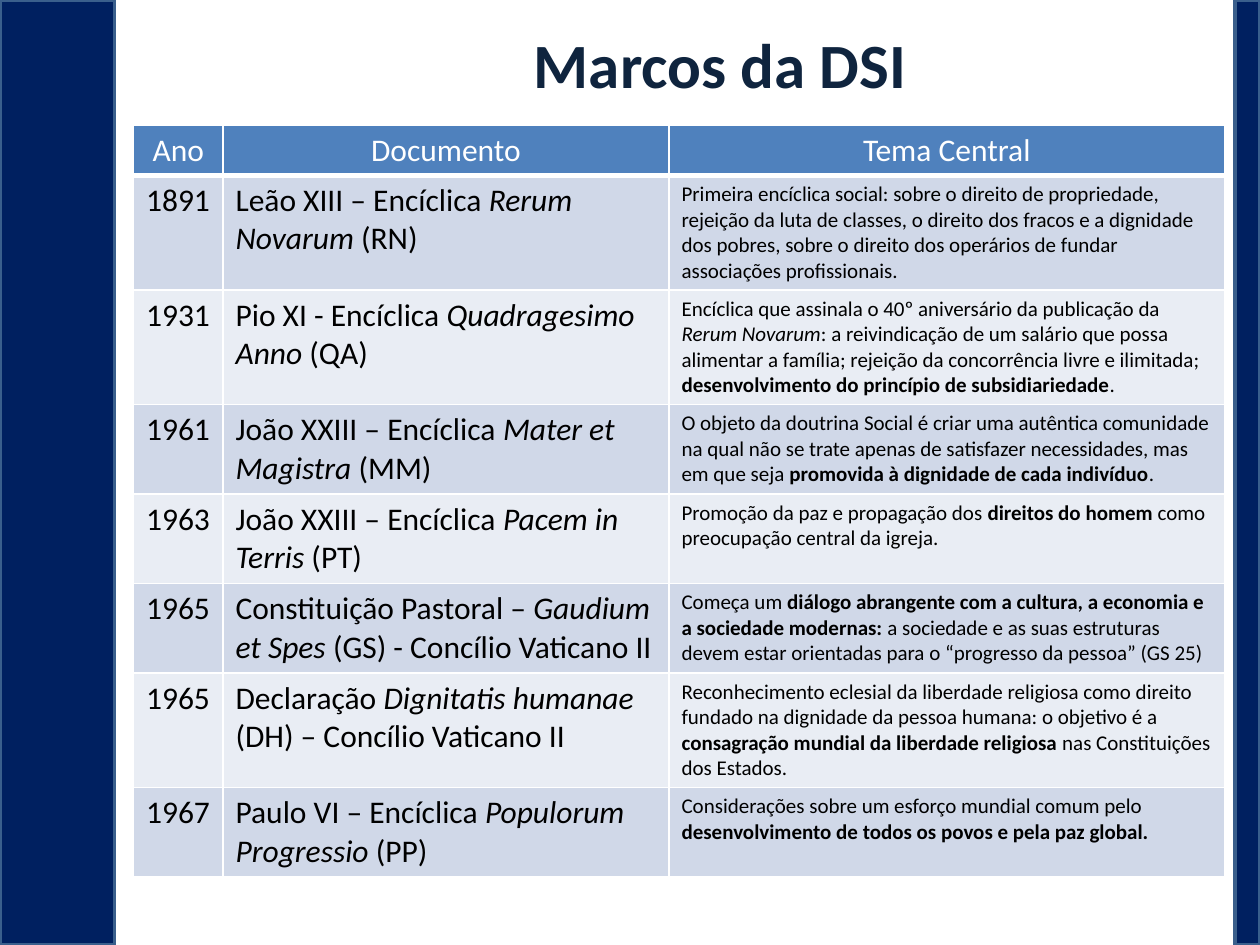
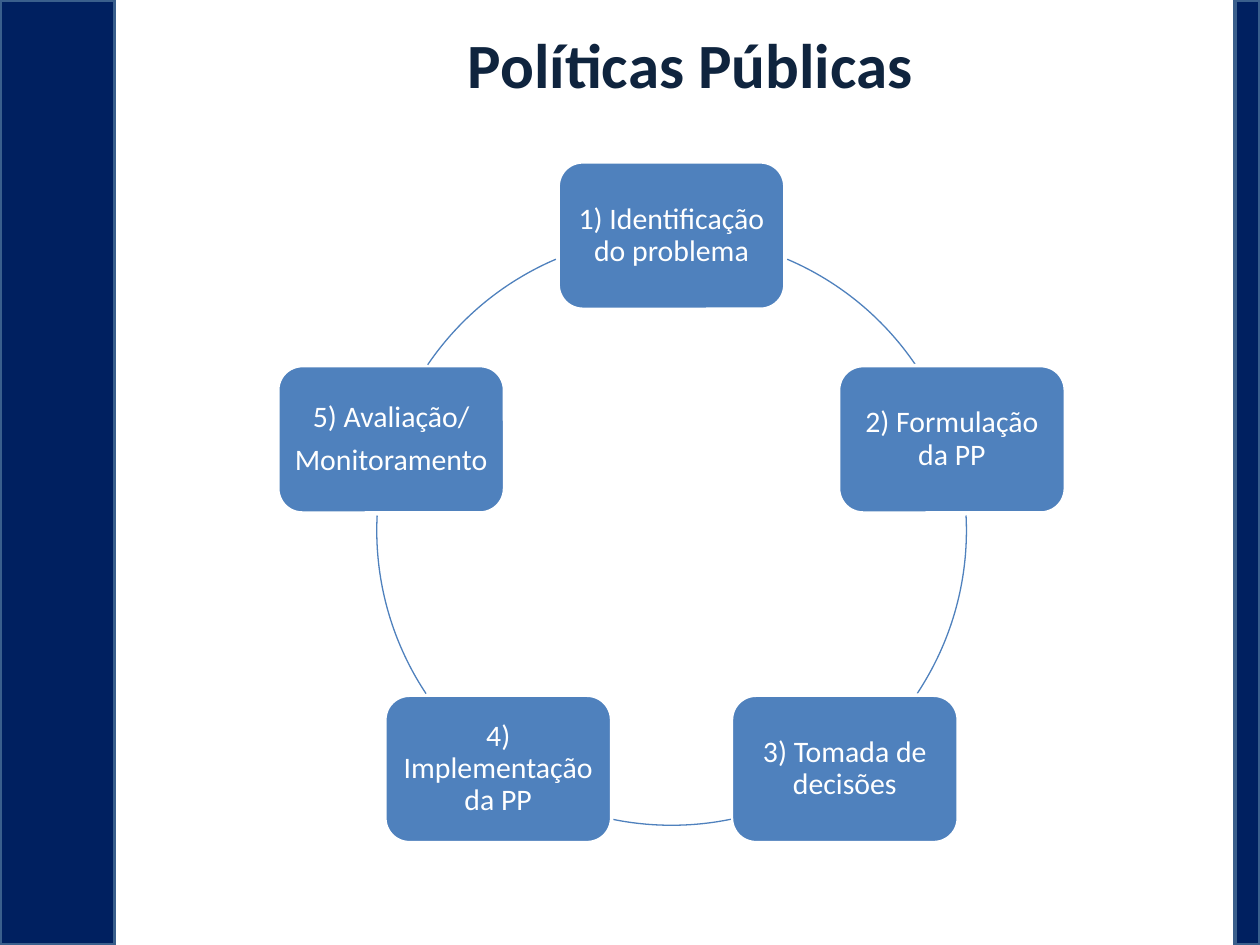
from math import cos, radians, sin

from lxml import etree
from pptx import Presentation
from pptx.dml.color import RGBColor
from pptx.enum.shapes import MSO_SHAPE
from pptx.enum.text import MSO_ANCHOR, PP_ALIGN
from pptx.oxml.ns import qn
from pptx.util import Inches, Pt

RECT, ROUND, ARC = MSO_SHAPE.RECTANGLE, MSO_SHAPE.ROUNDED_RECTANGLE, MSO_SHAPE.ARC
LEFT, CENTER = PP_ALIGN.LEFT, PP_ALIGN.CENTER
TOP, MIDDLE = MSO_ANCHOR.TOP, MSO_ANCHOR.MIDDLE

FONT = "Calibri"
COLORS = {
    "navy": "002060", "edge": "3A5F8C", "title": "0F243E", "blue": "4F81BD",
    "odd": "D0D8E8", "even": "E9EDF4", "white": "FFFFFF", "black": "000000",
}

# Table content: _italic_ and *bold* spans; the first item is the row height
HEADS = ("Ano", "Documento", "Tema Central")
WIDTHS = (0.71, 3.54, 4.41)
ROWS = [
    (0.91, "1891", "Leão XIII – Encíclica _Rerum Novarum_ (RN)",
     "Primeira encíclica social: sobre o direito de propriedade, rejeição da luta "
     "de classes, o direito dos fracos e a dignidade dos pobres, sobre o direito "
     "dos operários de fundar associações profissionais."),
    (0.91, "1931", "Pio XI - Encíclica _Quadragesimo Anno_ (QA)",
     "Encíclica que assinala o 40º aniversário da publicação da _Rerum Novarum_: "
     "a reivindicação de um salário que possa alimentar a família; rejeição da "
     "concorrência livre e ilimitada; "
     "*desenvolvimento do princípio de subsidiariedade*."),
    (0.71, "1961", "João XXIII – Encíclica _Mater et Magistra_ (MM)",
     "O objeto da doutrina Social é criar uma autêntica comunidade na qual não se "
     "trate apenas de satisfazer necessidades, mas em que seja "
     "*promovida à dignidade de cada indivíduo*."),
    (0.71, "1963", "João XXIII – Encíclica _Pacem in Terris_ (PT)",
     "Promoção da paz e propagação dos *direitos do homem* como preocupação "
     "central da igreja."),
    (0.71, "1965", "Constituição Pastoral – _Gaudium et Spes _(GS) - Concílio Vaticano II",
     "Começa um *diálogo abrangente com a cultura, a economia e a sociedade "
     "modernas:* a sociedade e as suas estruturas devem estar orientadas para o "
     "“progresso da pessoa” (GS 25)"),
    (0.91, "1965", "Declaração _Dignitatis humanae _(DH) – Concílio Vaticano II",
     "Reconhecimento eclesial da liberdade religiosa como direito fundado na "
     "dignidade da pessoa humana: o objetivo é a *consagração mundial da liberdade "
     "religiosa* nas Constituições dos Estados."),
    (0.71, "1967", "Paulo VI – Encíclica _Populorum Progressio_ (PP)",
     "Considerações sobre um esforço mundial comum pelo "
     "*desenvolvimento de todos os povos e pela paz global.*"),
]

# Cycle content: steps, and the arcs between them in degrees from the top
STEPS = ["1) Identificação do problema", "2) Formulação da PP",
         "3) Tomada de decisões", "4) Implementação da PP",
         "5) Avaliação/\nMonitoramento"]
ARCS = [(23.1, 55.8), (87.1, 123.6), (168.4, 191.6), (236.4, 272.9), (304.2, 336.9)]
MID_X, MID_Y, RADIUS = 5.33, 4.21, 2.34
BOX_W, BOX_H = 1.8, 1.17


def rgb(name):
    return RGBColor.from_string(COLORS[name])


def write(frame, text, size=18, color="black", bold=False, align=LEFT,
          anchor=TOP, inset=None, lines=None, after=0):
    """Fill a text frame, one paragraph a line, with _italic_ and *bold* spans."""
    frame.word_wrap = True
    frame.vertical_anchor = anchor
    if inset is not None:
        frame.margin_left = frame.margin_right = Inches(inset)
        frame.margin_top = frame.margin_bottom = Inches(inset)
    for num, line in enumerate(text.split("\n")):
        para = frame.add_paragraph() if num else frame.paragraphs[0]
        para.alignment = align
        para.space_after = Pt(after)
        if lines:
            para.line_spacing = lines
        for i, part in enumerate(line.split("*")):
            for j, bit in enumerate(part.split("_")):
                if not bit:
                    continue
                run = para.add_run()
                run.text = bit
                font = run.font
                font.name, font.size = FONT, Pt(size)
                font.bold = bold or i % 2 == 1
                font.italic = j % 2 == 1
                font.color.rgb = rgb(color)


def shape(slide, kind, box, fill, line, width):
    item = slide.shapes.add_shape(kind, *map(Inches, box))
    item.shadow.inherit = False
    if fill:
        item.fill.solid()
        item.fill.fore_color.rgb = rgb(fill)
    else:
        item.fill.background()
    item.line.color.rgb = rgb(line)
    item.line.width = Pt(width)
    return item


def page(deck, title, left):
    """Add a slide with the side bands and a title that ends at 9.66 inches."""
    slide = deck.slides.add_slide(deck.slide_layouts[6])
    for x, wide in ((0, 0.91), (9.8, 0.2)):
        shape(slide, RECT, (x, 0, wide, 7.5), "navy", "edge", 2)
    box = slide.shapes.add_textbox(
        Inches(left), Inches(0.13), Inches(9.66 - left), Inches(0.75))
    write(box.text_frame, title, size=36, color="title", bold=True,
          align=CENTER, anchor=MIDDLE)
    return slide


def border(cell, **widths):
    """Draw white cell edges; widths are points by side."""
    props = cell._tc.get_or_add_tcPr()
    for side in "LRTB":
        edge = etree.SubElement(props, qn("a:ln" + side), w=str(Pt(widths.get(side, 1))))
        fill = etree.SubElement(edge, qn("a:solidFill"))
        etree.SubElement(fill, qn("a:srgbClr"), val=COLORS["white"])


def paint(cell, fill, text, **style):
    cell.fill.solid()
    cell.fill.fore_color.rgb = rgb(fill)
    write(cell.text_frame, text, **style)


def grid(slide):
    tall = [0.4] + [row[0] for row in ROWS]
    table = slide.shapes.add_table(
        len(tall), len(HEADS), Inches(1.06), Inches(0.99),
        Inches(sum(WIDTHS)), Inches(sum(tall))).table
    for col, wide in zip(table.columns, WIDTHS):
        col.width = Inches(wide)
    for row, high in zip(table.rows, tall):
        row.height = Inches(high)
    # Header row
    for col, head in enumerate(HEADS):
        cell = table.cell(0, col)
        border(cell, B=3)
        paint(cell, "blue", head, color="white", align=CENTER)
    # Banded body rows
    for num, (_, *texts) in enumerate(ROWS, 1):
        for col, text in enumerate(texts):
            cell = table.cell(num, col)
            border(cell, T=3 if num == 1 else 1)
            paint(cell, "odd" if num % 2 else "even", text,
                  size=12 if col == 2 else 18)


def cycle(slide):
    ring = (MID_X - RADIUS, MID_Y - RADIUS, 2 * RADIUS, 2 * RADIUS)
    for num, (step, ends) in enumerate(zip(STEPS, ARCS)):
        # Step box, placed clockwise from the top of the ring
        turn = radians(num * 360 / len(STEPS))
        x = MID_X + RADIUS * sin(turn) - BOX_W / 2
        y = MID_Y - RADIUS * cos(turn) - BOX_H / 2
        box = shape(slide, ROUND, (x, y, BOX_W, BOX_H), "blue", "white", 2)
        write(box.text_frame, step, size=17, color="white", align=CENTER,
              anchor=MIDDLE, inset=0.07, lines=0.9, after=6)
        # Arc to the next step; adjustments count 0.6 a degree from the right
        arc = shape(slide, ARC, ring, None, "blue", 0.75)
        for k, angle in enumerate(ends):
            arc.adjustments[k] = (angle - 90) % 360 * 0.6


def main():
    deck = Presentation()
    deck.slide_width, deck.slide_height = Inches(10), Inches(7.5)
    grid(page(deck, "Marcos da DSI", 1.77))
    cycle(page(deck, "Políticas Públicas", 1.3))
    deck.save("out.pptx")


if __name__ == "__main__":
    main()
